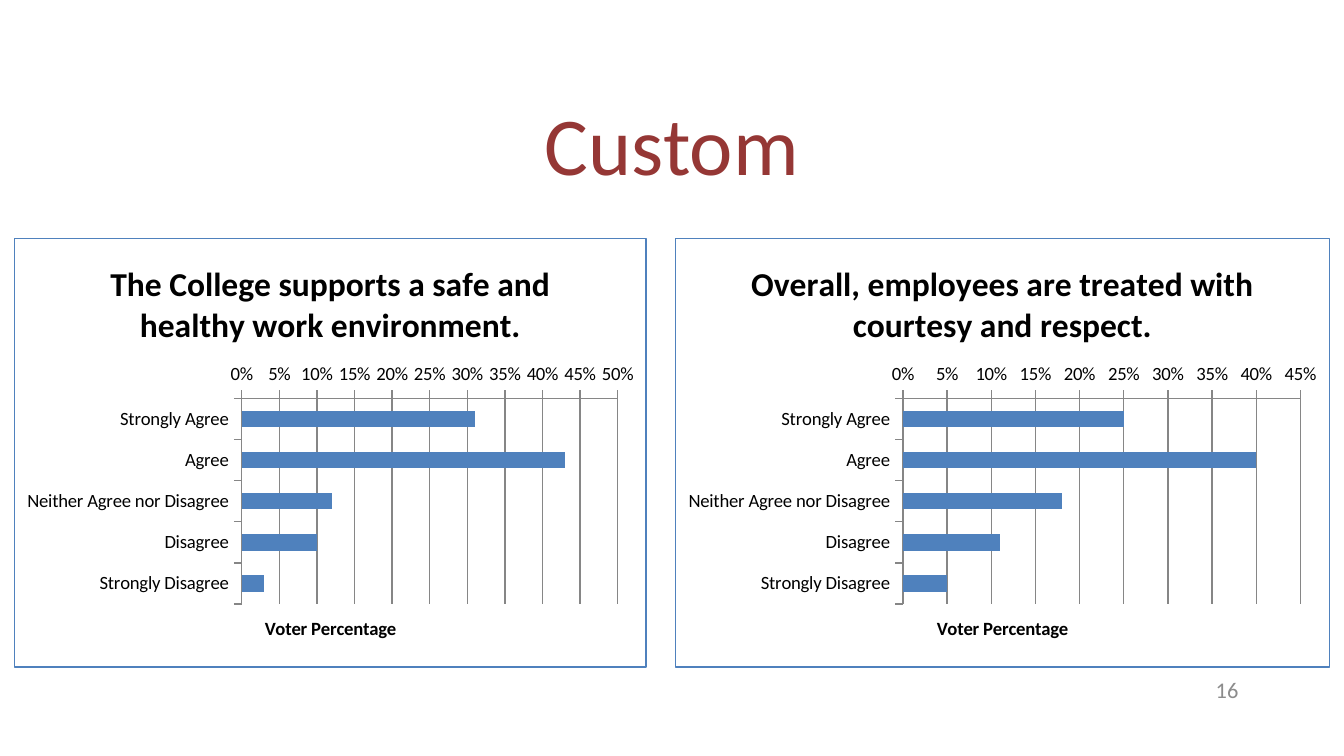
from dataclasses import dataclass

from lxml.etree import fromstring
from pptx import Presentation
from pptx.chart.data import CategoryChartData
from pptx.dml.color import RGBColor as RGB
from pptx.enum.chart import XL_CHART_TYPE as ChartType, XL_TICK_MARK as Tick
from pptx.enum.text import MSO_ANCHOR as Anchor, PP_ALIGN as Align
from pptx.util import Pt

PX = 9525
WIDTH, HEIGHT = 960, 540
NS_C = "http://schemas.openxmlformats.org/drawingml/2006/chart"
NS_A = "http://schemas.openxmlformats.org/drawingml/2006/main"


@dataclass(frozen=True)
class Theme:
    font: str = "Calibri"
    title: str = "953735"
    ink: str = "000000"
    bar: str = "4F81BD"
    axis: str = "868686"
    number: str = "8C8C8C"
    title_pt: int = 44
    chart_title_pt: int = 18
    label_pt: int = 10
    number_pt: int = 12
    border_pt: float = 0.75


THEME = Theme()
ANSWERS = ["Strongly Agree", "Agree", "Neither Agree nor Disagree",
           "Disagree", "Strongly Disagree"]
PANELS = [
    ((482, 170, 468, 307),
     "Overall, employees are treated with courtesy and respect.",
     [0.25, 0.40, 0.18, 0.11, 0.05]),
    ((10, 170, 452, 307),
     "The College supports a safe and healthy work environment.",
     [0.31, 0.43, 0.12, 0.10, 0.03]),
]


def emu(box):
    return [v * PX for v in box]


def style(font, size, color, bold=False):
    font.name = THEME.font
    font.size = Pt(size)
    font.bold = bold
    font.color.rgb = RGB.from_string(color)


def add_run(p, text, size, color, bold=False):
    r = p.add_run()
    r.text = text
    style(r.font, size, color, bold)


def add_text(slide, box, text, size, color, align, spacing=None):
    tf = slide.shapes.add_textbox(*emu(box)).text_frame
    tf.word_wrap = True
    tf.vertical_anchor = Anchor.MIDDLE
    p = tf.paragraphs[0]
    p.alignment = align
    p.line_spacing = spacing
    add_run(p, text, size, color)


def add_border(chart):
    area = fromstring(
        f'<c:spPr xmlns:c="{NS_C}" xmlns:a="{NS_A}">'
        f'<a:ln w="{Pt(THEME.border_pt)}"><a:solidFill>'
        f'<a:srgbClr val="{THEME.bar}"/></a:solidFill></a:ln></c:spPr>')
    chart.element.find(f"{{{NS_C}}}chart").addnext(area)


def style_line(line):
    line.color.rgb = RGB.from_string(THEME.axis)
    line.width = Pt(THEME.border_pt)


def add_survey_chart(slide, box, question, shares):
    data = CategoryChartData(number_format="0%")
    data.categories = ANSWERS
    data.add_series("Series 1", shares)
    chart = slide.shapes.add_chart(ChartType.BAR_CLUSTERED, *emu(box), data).chart
    style(chart.font, THEME.label_pt, THEME.ink)
    add_border(chart)
    chart.has_legend = False
    chart.has_title = True
    add_run(chart.chart_title.text_frame.paragraphs[0], question,
            THEME.chart_title_pt, THEME.ink, True)

    plot = chart.plots[0]
    plot.gap_width = 150
    plot.vary_by_categories = False
    fill = plot.series[0].format.fill
    fill.solid()
    fill.fore_color.rgb = RGB.from_string(THEME.bar)

    cats, vals = chart.category_axis, chart.value_axis
    cats.reverse_order = True
    for axis in (cats, vals):
        axis.major_tick_mark = Tick.OUTSIDE
        axis.minor_tick_mark = Tick.NONE
        style_line(axis.format.line)
    vals.has_major_gridlines = True
    style_line(vals.major_gridlines.format.line)
    vals.tick_labels.number_format = "0%"
    vals.tick_labels.number_format_is_linked = False
    vals.has_title = True
    add_run(vals.axis_title.text_frame.paragraphs[0], "Voter Percentage",
            THEME.label_pt, THEME.ink, True)


def main():
    prs = Presentation()
    prs.slide_width, prs.slide_height = WIDTH * PX, HEIGHT * PX
    slide = prs.slides.add_slide(prs.slide_layouts[6])
    add_text(slide, (66, 54, 828, 105), "Custom",
             THEME.title_pt, THEME.title, Align.CENTER, 0.9)
    for box, question, shares in PANELS:
        add_survey_chart(slide, box, question, shares)
    add_text(slide, (678, 478, 216, 29), "16",
             THEME.number_pt, THEME.number, Align.RIGHT)
    prs.save("out.pptx")


if __name__ == "__main__":
    main()
